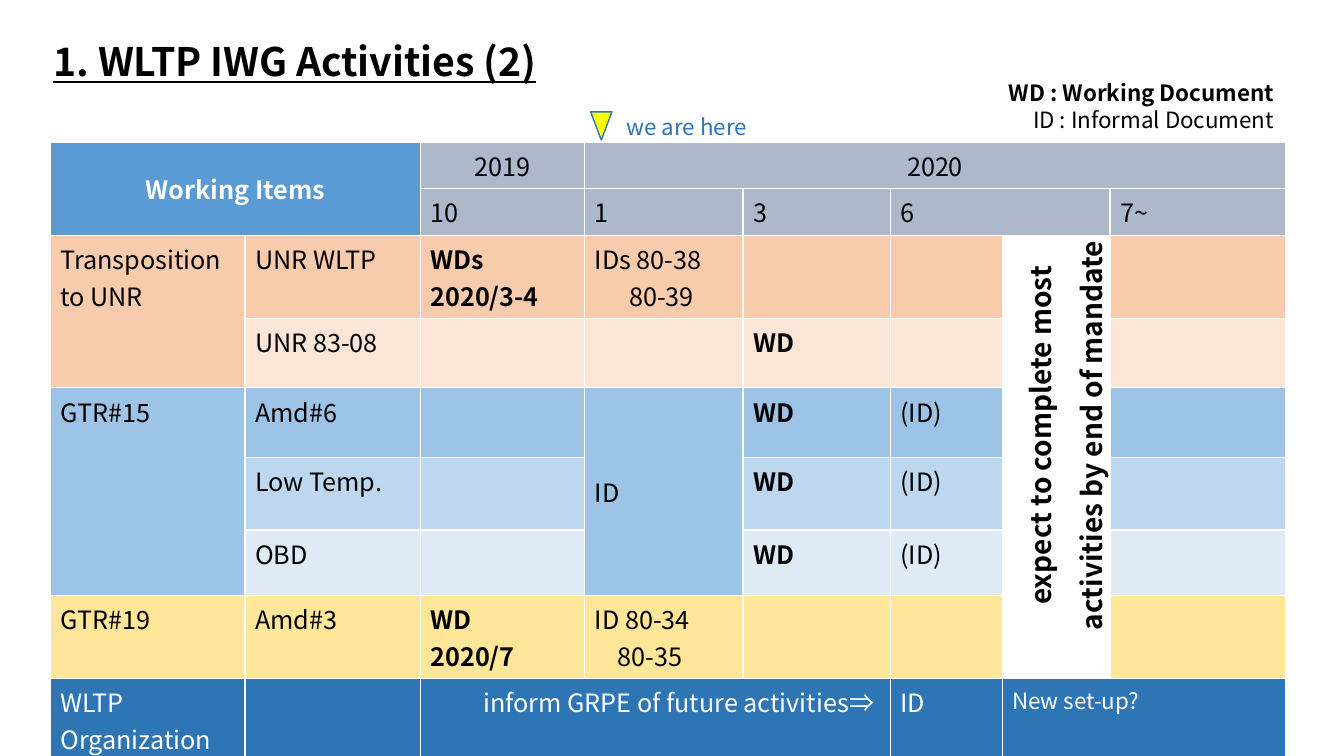
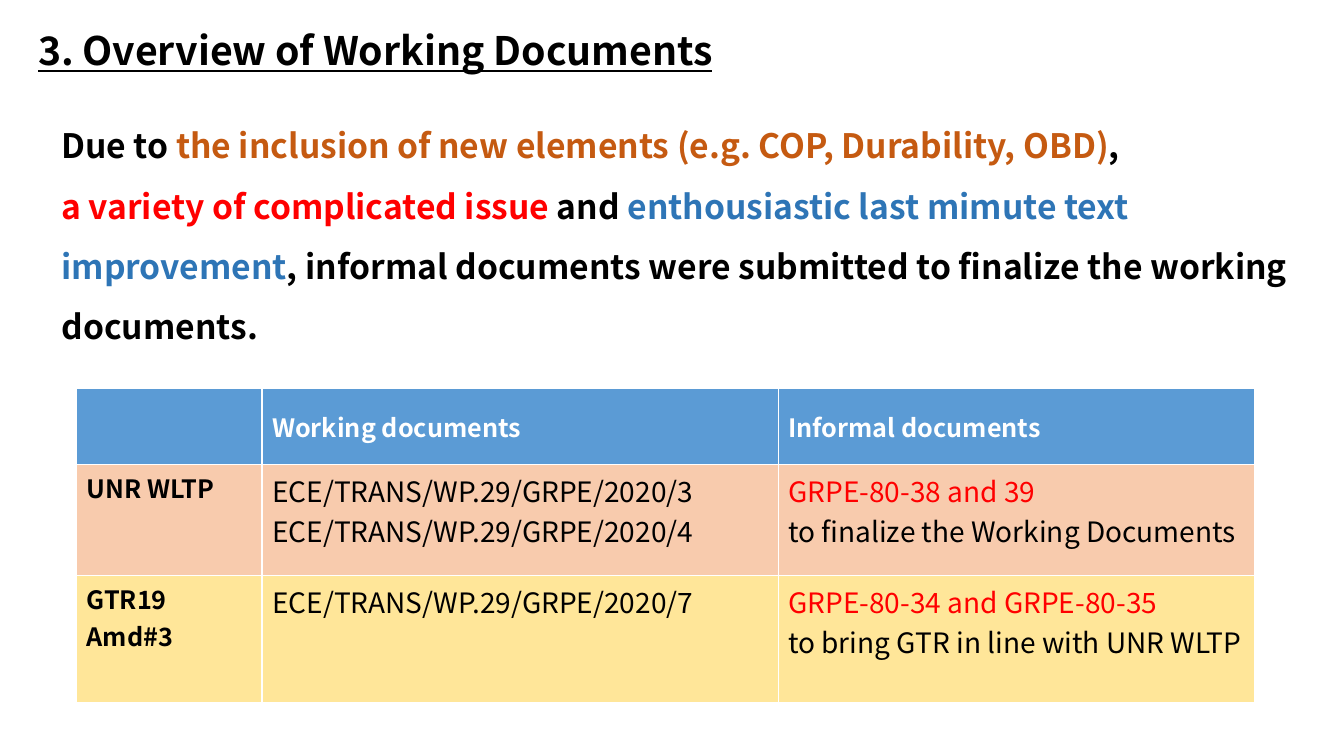
"""Build the two WLTP status slides: activity schedule and document overview."""
from dataclasses import dataclass

from pptx import Presentation
from pptx import util as u
from pptx.dml.color import RGBColor
from pptx.enum import shapes, text

FONT = "Noto Sans CJK JP"
WIDTH, HEIGHT = u.Inches(13.33), u.Inches(7.5)
COLORS = {
    "black": "000000", "white": "FFFFFF", "red": "FF0000", "yellow": "FFFF00",
    "blue": "2E75B6", "brown": "C55A11", "header": "5B9BD5", "month": "ADB9CA",
    "orange": "F8CBAD", "pale orange": "FBE5D6", "sand": "FFE699",
    "sky": "9DC3E6", "light sky": "BDD7EE", "pale sky": "DEEBF7",
}
CENTER, RIGHT = text.PP_ALIGN.CENTER, text.PP_ALIGN.RIGHT
MIDDLE = text.MSO_ANCHOR.MIDDLE


@dataclass
class Line:
    """One paragraph; phrases holds (text, color) pairs for mixed colours."""
    words: str = ""
    size: float = 18
    color: str = "black"
    bold: bool = False
    underline: bool = False
    align: object = None
    spacing: float = None
    indent: float = 0
    phrases: tuple = ()


def rgb(name):
    """Return the named palette colour."""
    return RGBColor.from_string(COLORS[name])


def across(share):
    """Turn a percentage of the slide width into a length."""
    return u.Emu(round(WIDTH * share / 100))


def down(share):
    """Turn a percentage of the slide height into a length."""
    return u.Emu(round(HEIGHT * share / 100))


def box(left, top, width, height):
    """Turn four slide percentages into a position and size."""
    return across(left), down(top), across(width), down(height)


def paint(target, name):
    """Fill a shape or cell with a palette colour."""
    target.fill.solid()
    target.fill.fore_color.rgb = rgb(name)


def write(frame, lines):
    """Write lines into a text frame, one paragraph each."""
    for index, line in enumerate(lines):
        paragraph = frame.add_paragraph() if index else frame.paragraphs[0]
        font = paragraph.font
        font.name, font.size, font.bold = FONT, u.Pt(line.size), line.bold
        if line.underline:
            font.underline = True
        if line.align is not None:
            paragraph.alignment = line.align
        if line.spacing:
            paragraph.line_spacing = line.spacing
        if line.indent:
            properties = paragraph._p.get_or_add_pPr()
            properties.set("marL", str(u.Inches(line.indent)))
            properties.set("indent", "0")
        if line.phrases:
            for words, color in line.phrases:
                run = paragraph.add_run()
                run.text = words
                run.font.color.rgb = rgb(color)
        else:
            font.color.rgb = rgb(line.color)
            paragraph.add_run().text = line.words


def add_text(slide, place, *lines, wrap=True, rotation=0):
    """Add a text box that grows with its lines."""
    label = slide.shapes.add_textbox(*box(*place))
    label.rotation = rotation
    label.text_frame.word_wrap = wrap
    label.text_frame.auto_size = text.MSO_AUTO_SIZE.SHAPE_TO_FIT_TEXT
    write(label.text_frame, lines)


def add_title(slide, words, place):
    """Add the underlined slide title."""
    add_text(slide, place, Line(words, 28, bold=True, underline=True), wrap=False)


def add_grid(slide, corner, columns, rows, fills, content, merges=(), fill_at=None, middle=()):
    """Add a table with one fill per row, exceptions by cell, and sparse content."""
    size = sum(columns), sum(rows)
    grid = slide.shapes.add_table(len(rows), len(columns), *box(*corner, *size)).table
    grid.horz_banding = False
    for column, share in zip(grid.columns, columns):
        column.width = across(share)
    for row, share in zip(grid.rows, rows):
        row.height = down(share)
    for r, c, last_r, last_c in merges:
        grid.cell(r, c).merge(grid.cell(last_r, last_c))
    for r, fill in enumerate(fills):
        for c in range(len(columns)):
            cell = grid.cell(r, c)
            if cell.is_spanned:
                continue
            paint(cell, (fill_at or {}).get((r, c), fill))
            if (r, c) in content:
                write(cell.text_frame, content[r, c])
            if (r, c) in middle:
                cell.vertical_anchor = MIDDLE


def add_marker(slide, place):
    """Add the triangle that points down at the current month."""
    marker = slide.shapes.add_shape(shapes.MSO_SHAPE.ISOSCELES_TRIANGLE, *box(*place))
    marker.shadow.inherit = False
    paint(marker, "yellow")
    marker.line.color.rgb = rgb("blue")
    marker.line.width = u.Pt(1)
    marker._element.spPr.xfrm.set("flipV", "1")


def schedule_content():
    """Return the schedule's lines by row and column."""
    plain = {
        (1, 2): "10", (1, 3): "1", (1, 4): "3", (1, 5): "6", (1, 7): "7~",
        (2, 0): "Transposition to UNR", (2, 1): "UNR WLTP", (3, 1): "UNR 83-08",
        (4, 0): "GTR#15", (4, 1): "Amd#6", (4, 3): "ID",
        (5, 1): "Low Temp.", (6, 1): "OBD", (7, 0): "GTR#19", (7, 1): "Amd#3",
    }
    content = {spot: [Line(words)] for spot, words in plain.items()}
    content.update({(r, 4): [Line("WD", bold=True)] for r in range(3, 7)})
    content.update({(r, 5): [Line("(ID)")] for r in range(4, 7)})
    content.update({
        (0, 0): [Line("Working Items", color="white", bold=True, align=CENTER)],
        (0, 2): [Line("2019", align=CENTER)],
        (0, 3): [Line("2020", align=CENTER)],
        (2, 2): [Line("WDs", bold=True), Line("2020/3-4", bold=True)],
        (2, 3): [Line("IDs 80-38"), Line("80-39", indent=0.34)],
        (7, 2): [Line("WD", bold=True), Line("2020/7", bold=True)],
        (7, 3): [Line("ID 80-34"), Line("80-35", indent=0.23)],
        (8, 0): [Line("WLTP Organization", color="white")],
        (8, 2): [Line("inform GRPE of future activities⇒ ", color="white", align=RIGHT)],
        (8, 5): [Line("ID", color="white")],
        (8, 6): [Line("New set-up?", 16, "white")],
    })
    return content


def build_activities(slide):
    """Build the schedule of working items by meeting month."""
    add_grid(
        slide, (3.75, 18.8),
        (14.48, 13.05, 12.23, 11.78, 10.95, 8.33, 8.03, 13.05),
        (5.33, 5.6, 9.33, 9.2, 9.2, 9.6, 8.67, 9.87, 10.93),
        ("month", "month", "orange", "pale orange", "sky", "light sky",
         "pale sky", "sand", "blue"),
        schedule_content(),
        merges=((0, 0, 1, 1), (0, 3, 0, 7), (1, 5, 1, 6), (2, 0, 3, 0), (2, 6, 7, 6),
                (4, 0, 6, 0), (4, 3, 6, 3), (8, 2, 8, 4), (8, 6, 8, 7)),
        fill_at={(0, 0): "header", (2, 6): "white"},
        middle=((0, 0), (4, 3)),
    )
    add_text(slide, (67.65, 9.87, 27.9, 8.53),
             Line("WD : Working Document", 16, bold=True, align=RIGHT),
             Line("ID : Informal Document", 16, align=RIGHT))
    add_text(slide, (61.88, 50.67, 33.15, 13.87),
             Line("expect to complete most activities by end of mandate", 20,
                  bold=True, align=CENTER, spacing=1.5), rotation=270)
    add_marker(slide, (43.95, 14.8, 1.58, 3.73))
    add_text(slide, (43.95, 14.27, 12.38, 4.93),
             Line("we are here", 16, "blue", align=RIGHT))
    add_title(slide, "1. WLTP IWG Activities (2)", (3.23, 4.27, 42.98, 7.6))


def build_documents(slide):
    """Build the overview of working and informal documents."""
    add_title(slide, "3. Overview of Working Documents", (2.1, 2.8, 57.98, 7.6))
    reasons = (
        (("Due to ", "black"),
         ("the inclusion of new elements (e.g. COP, Durability, OBD)", "brown"),
         (",", "black")),
        (("a variety of complicated issue ", "red"), ("and ", "black"),
         ("enthousiastic last mimute text improvement", "blue"),
         (", informal documents were submitted to finalize the working documents.", "black")),
    )
    add_text(slide, (3.83, 13.2, 95.25, 33.6),
             *(Line(size=24, bold=True, spacing=1.5, phrases=reason) for reason in reasons))
    series = "ECE/TRANS/WP.29/GRPE/2020/"
    content = {
        (0, 1): [Line("Working documents", color="white", bold=True)],
        (0, 2): [Line("Informal documents", color="white", bold=True)],
    }
    documents = (
        ("UNR WLTP", (3, 4), "GRPE-80-38 and 39", "to finalize the Working Documents"),
        ("GTR19 Amd#3", (7,), "GRPE-80-34 and GRPE-80-35",
         "to bring GTR in line with UNR WLTP"),
    )
    for r, (regulation, numbers, informal, purpose) in enumerate(documents, 1):
        content[r, 0] = [Line(regulation, bold=True)]
        content[r, 1] = [Line(f"{series}{number}", 20) for number in numbers]
        content[r, 2] = [Line(informal, 20, "red"), Line(purpose, 20)]
    add_grid(slide, (5.7, 51.33), (13.8, 38.4, 35.48), (10.13, 14.67, 16.8),
             ("header", "orange", "sand"), content, middle=((0, 1), (0, 2)))


def main():
    """Build and save the presentation."""
    deck = Presentation()
    deck.slide_width, deck.slide_height = WIDTH, HEIGHT
    for build in (build_activities, build_documents):
        build(deck.slides.add_slide(deck.slide_layouts[6]))
    deck.save("out.pptx")


if __name__ == "__main__":
    main()
